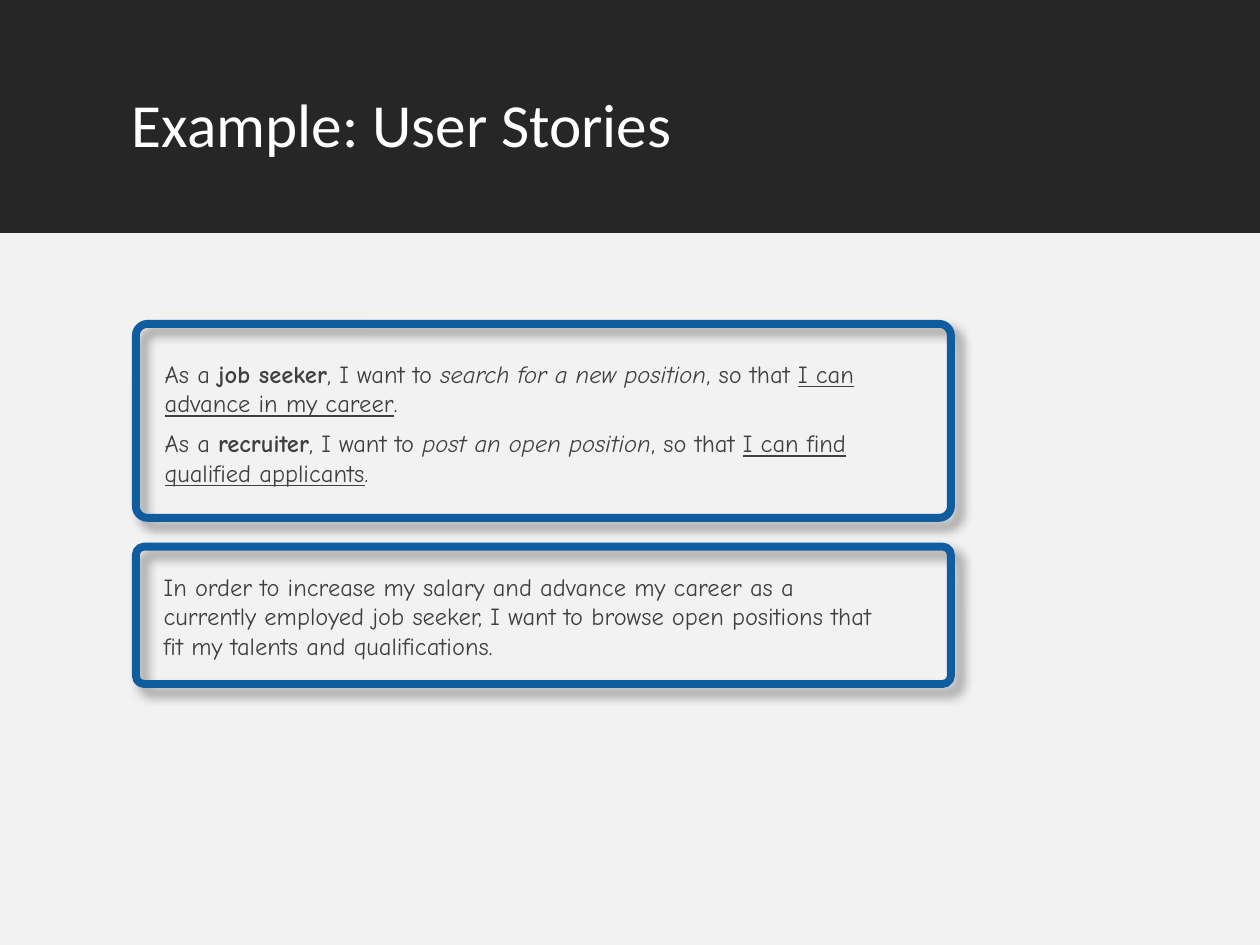
from dataclasses import dataclass

import pptx
import pptx.dml.color
import pptx.enum.shapes
import pptx.oxml
import pptx.oxml.ns
import pptx.util
from pptx.dml.color import RGBColor
from pptx.util import Cm, Pt

DARK = RGBColor(0x26, 0x26, 0x26)
LIGHT = RGBColor(0xF2, 0xF2, 0xF2)
WHITE = RGBColor(0xFF, 0xFF, 0xFF)
GREY = RGBColor(0x40, 0x40, 0x40)
BLUE = RGBColor(0x0F, 0x5C, 0x9F)

SLIDE_W, SLIDE_H, HEADER_H = 25.4, 19.05, 4.7
CARD_LEFT, CARD_W, TEXT_W = 2.74, 16.43, 15.14

SHADOW = (
    f'<a:outerShdw {pptx.oxml.ns.nsdecls("a")} blurRad="{Pt(6)}" dist="{Pt(6)}" '
    'dir="2700000" algn="tl" rotWithShape="0"><a:srgbClr val="000000">'
    '<a:alpha val="40000"/></a:srgbClr></a:outerShdw>'
)


@dataclass
class Span:
    text: str
    bold: bool = False
    italic: bool = False
    underline: bool = False


@dataclass
class Box:
    left: float
    top: float
    width: float
    height: float

    def lengths(self) -> tuple:
        return Cm(self.left), Cm(self.top), Cm(self.width), Cm(self.height)


@dataclass
class Card:
    frame: Box
    text: Box
    paragraphs: list[list[Span]]


def user_story(role: str, goal: str, benefit: str) -> list[Span]:
    return [
        Span("As a "),
        Span(role, bold=True),
        Span(", I want to "),
        Span(goal, italic=True),
        Span(", so that "),
        Span(benefit, underline=True),
        Span("."),
    ]


CARDS = [
    Card(
        Box(CARD_LEFT, 6.53, CARD_W, 3.91),
        Box(3.07, 7.11, TEXT_W, 2.87),
        [
            user_story("job seeker", "search for a new position",
                       "I can advance in my career"),
            user_story("recruiter", "post an open position",
                       "I can find qualified applicants"),
        ],
    ),
    Card(
        Box(CARD_LEFT, 11.02, CARD_W, 2.77),
        Box(3.05, 11.4, TEXT_W, 2.06),
        [[Span("In order to increase my salary and advance my career as a "
               "currently employed job seeker, I want to browse open positions "
               "that fit my talents and qualifications.")]],
    ),
]


def add_band(s, box: Box, color: RGBColor) -> None:
    sp = s.shapes.add_shape(
        pptx.enum.shapes.MSO_SHAPE.RECTANGLE, *box.lengths())
    sp.shadow.inherit = False
    sp.fill.solid()
    sp.fill.fore_color.rgb = color
    sp.line.fill.background()


def add_text(s, box: Box, paragraphs: list[list[Span]], font: str, size: float,
             color: RGBColor, space_after: float = 0,
             line_spacing: float = 1.0) -> None:
    tf = s.shapes.add_textbox(*box.lengths()).text_frame
    tf.word_wrap = True
    for i, spans in enumerate(paragraphs):
        p = tf.add_paragraph() if i else tf.paragraphs[0]
        p.space_after = Pt(space_after)
        p.line_spacing = line_spacing
        for span in spans:
            r = p.add_run()
            r.text = span.text
            r.font.name = font
            r.font.size = Pt(size)
            r.font.color.rgb = color
            r.font.bold = span.bold
            r.font.italic = span.italic
            r.font.underline = span.underline


def add_card(s, card: Card) -> None:
    sp = s.shapes.add_shape(
        pptx.enum.shapes.MSO_SHAPE.ROUNDED_RECTANGLE, *card.frame.lengths())
    sp.adjustments[0] = 0.06
    sp.fill.background()
    sp.line.color.rgb = BLUE
    sp.line.width = Pt(4.5)
    sp.shadow.inherit = False
    effects = sp._element.spPr.find(pptx.oxml.ns.qn("a:effectLst"))
    effects.append(pptx.oxml.parse_xml(SHADOW))
    add_text(s, card.text, card.paragraphs, "Comic Neue", 14, GREY,
             space_after=6)


def main() -> None:
    prs = pptx.Presentation()
    prs.slide_width, prs.slide_height = Cm(SLIDE_W), Cm(SLIDE_H)
    s = prs.slides.add_slide(prs.slide_layouts[6])
    add_band(s, Box(0, 0, SLIDE_W, HEADER_H), DARK)
    add_text(s, Box(2.41, 1.78, 20.6, 2.49), [[Span("Example: User Stories")]],
             "Calibri", 35, WHITE, line_spacing=0.9)
    add_band(s, Box(0, HEADER_H, SLIDE_W, SLIDE_H - HEADER_H), LIGHT)
    for card in CARDS:
        add_card(s, card)
    prs.save("out.pptx")


if __name__ == "__main__":
    main()
